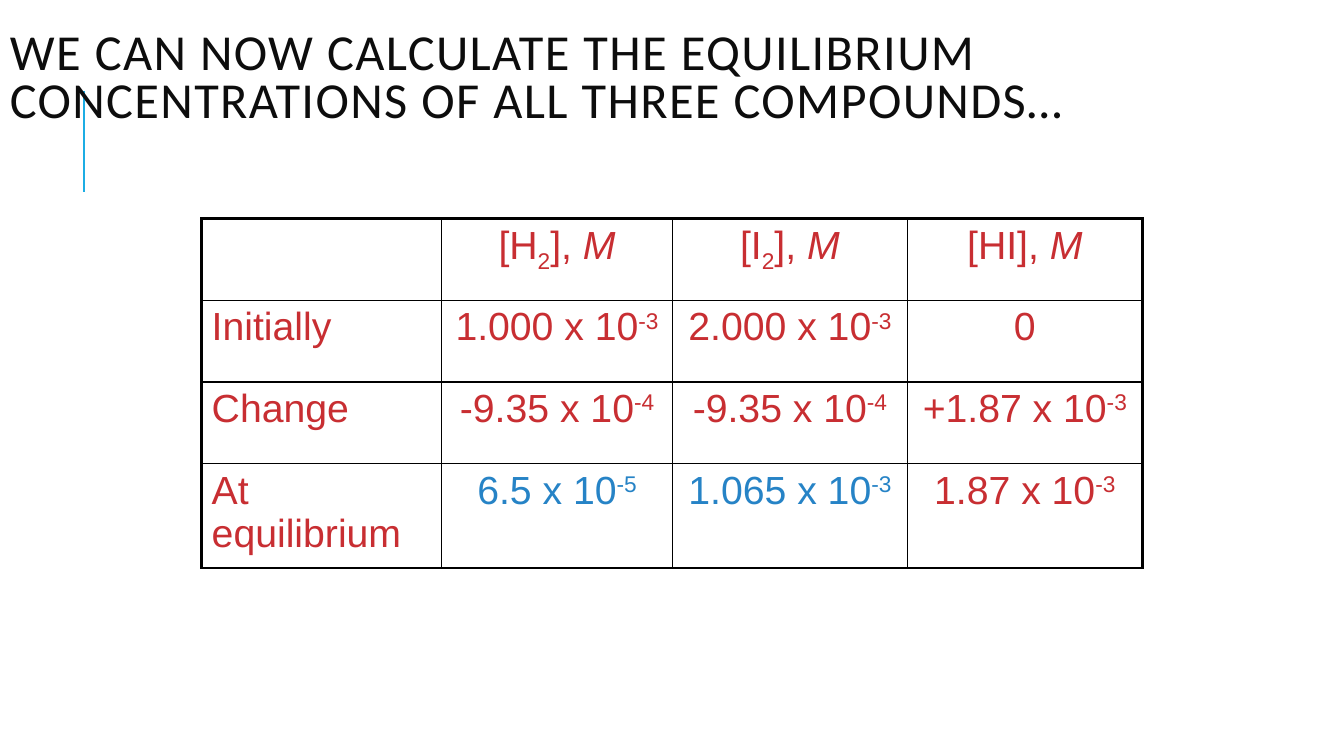
"""Build a slide with the equilibrium concentrations of three compounds."""
from lxml import etree
from pptx import Presentation
from pptx import util as u
from pptx.dml.color import RGBColor
from pptx.enum import shapes, text
from pptx.oxml import ns

THEME = {
    "title": {"name": "Calibri", "size": u.Pt(36), "color": "0D0D0D"},
    "body": {"name": "Arial", "size": u.Pt(28), "color": "C82E32"},
    "result": {"name": "Arial", "size": u.Pt(28), "color": "2683C6"},
    "accent": "1CADE4",
    "border": "000000",
    "inner": u.Pt(1),
    "outer": u.Pt(2.25),
}
RUN_XML = {
    "plain": {},
    "sub": {"baseline": "-25000"},
    "sup": {"baseline": "30000"},
    "italic": {"i": "1"},
    "spaced": {"spc": "100"},
}


def add_run(p, words, style, kind="plain"):
    r = p.add_run()
    r.text = words
    for name in ("name", "size"):
        setattr(r.font, name, style[name])
    r.font.color.rgb = RGBColor.from_string(style["color"])
    for name, value in RUN_XML[kind].items():
        r.font._element.set(name, value)


def add_border(cell, side, width):
    ln = etree.SubElement(cell._tc.get_or_add_tcPr(), ns.qn(f"a:ln{side}"), w=str(int(width)))
    fill = etree.SubElement(ln, ns.qn("a:solidFill"))
    etree.SubElement(fill, ns.qn("a:srgbClr"), val=THEME["border"])


prs = Presentation()
prs.slide_width, prs.slide_height = u.Inches(13.33), u.Inches(7.5)
s = prs.slides.add_slide(prs.slide_layouts[6])

rule = s.shapes.add_connector(
    shapes.MSO_CONNECTOR.STRAIGHT, u.Inches(0.83), u.Inches(1.9), u.Inches(0.83), u.Inches(0.9)
)
rule.line.color.rgb = RGBColor.from_string(THEME["accent"])
rule.line.width = u.Pt(1.5)
etree.SubElement(rule._element.spPr, ns.qn("a:effectLst"))

title = s.shapes.add_textbox(u.Inches(0), u.Inches(0.17), u.Inches(13.33), u.Inches(1.25))
tf = title.text_frame
for name, value in {"word_wrap": True, "vertical_anchor": text.MSO_ANCHOR.MIDDLE}.items():
    setattr(tf, name, value)
p = tf.paragraphs[0]
p.line_spacing = 0.8
add_run(
    p,
    "WE CAN NOW CALCULATE THE EQUILIBRIUM CONCENTRATIONS OF ALL THREE COMPOUNDS…",
    THEME["title"],
    "spaced",
)

molar = ("M", "italic")
header = [
    [],
    [("[H", "plain"), ("2", "sub"), ("], ", "plain"), molar],
    [("[I", "plain"), ("2", "sub"), ("], ", "plain"), molar],
    [("[HI], ", "plain"), molar],
]
values = [
    ["Initially", "1.000 x 10^-3", "2.000 x 10^-3", "0"],
    ["Change", "-9.35 x 10^-4", "-9.35 x 10^-4", "+1.87 x 10^-3"],
    ["At equilibrium", "6.5 x 10^-5", "1.065 x 10^-3", "1.87 x 10^-3"],
]
rows = [header] + [
    [list(zip(value.split("^"), ("plain", "sup"))) for value in row] for row in values
]
results = {(3, 1), (3, 2)}
col_widths = [2.38, 2.29, 2.33, 2.33]
last_row, last_col = len(rows) - 1, len(col_widths) - 1

table = s.shapes.add_table(
    len(rows), len(col_widths), u.Inches(2), u.Inches(2.17), u.Inches(9.33), u.Inches(3.24)
).table
for name in ("first_row", "horz_banding"):
    setattr(table, name, False)
for col, width in zip(table.columns, col_widths):
    col.width = u.Inches(width)
for row in table.rows:
    row.height = u.Inches(0.81)

for i, row in enumerate(rows):
    for j, runs in enumerate(row):
        cell = table.cell(i, j)
        edges = {"L": j == 0, "R": j == last_col, "T": i == 0, "B": i == last_row}
        for side, is_outer in edges.items():
            add_border(cell, side, THEME["outer" if is_outer else "inner"])
        cell.fill.background()
        p = cell.text_frame.paragraphs[0]
        p.font.size = THEME["body"]["size"]
        p.alignment = text.PP_ALIGN.CENTER if j else text.PP_ALIGN.LEFT
        style = THEME["result" if (i, j) in results else "body"]
        for words, kind in runs:
            add_run(p, words, style, kind)

prs.save("out.pptx")
